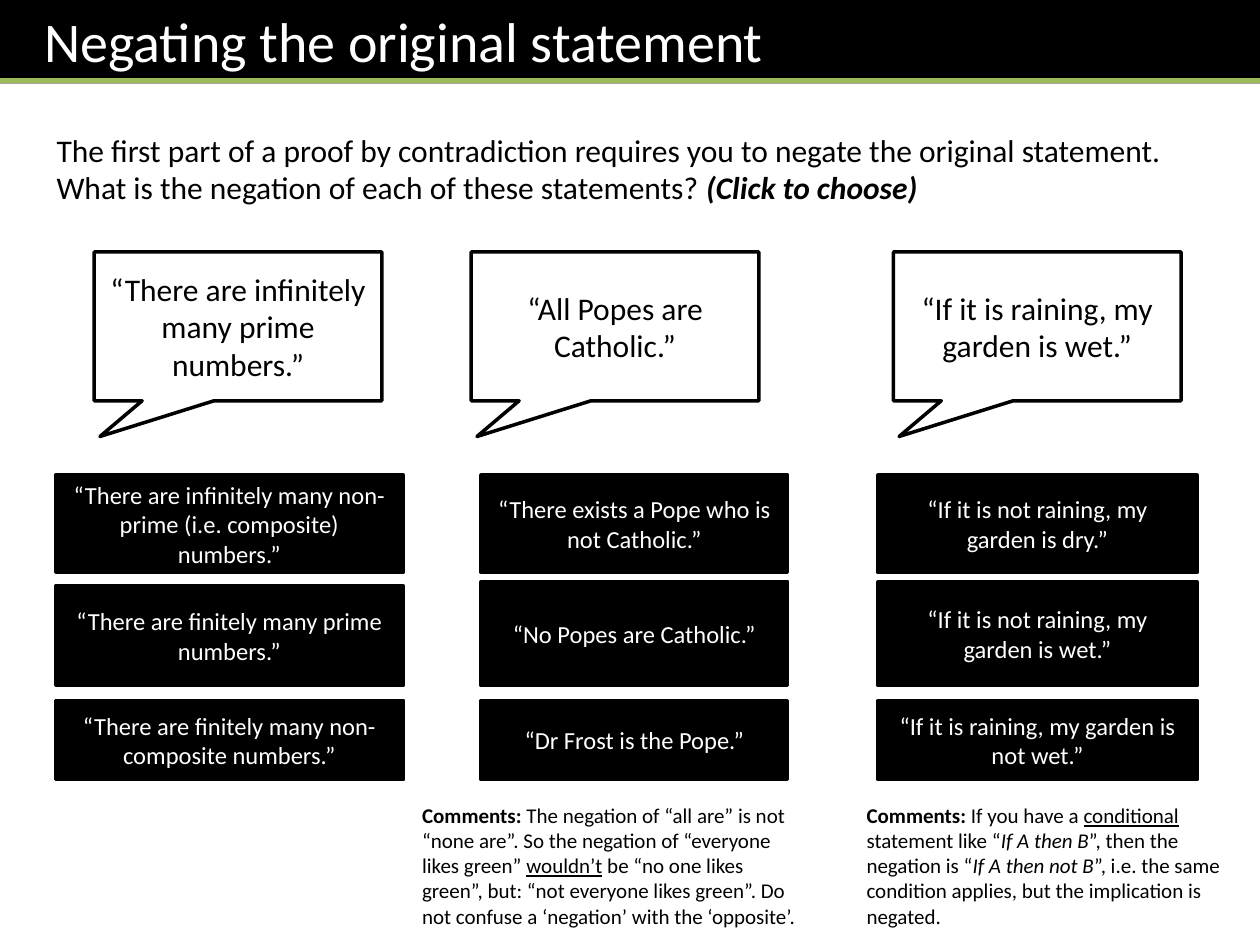
import pptx
import pptx.dml.color
import pptx.enum.shapes
import pptx.enum.text
import pptx.util
from lxml import etree

Cm = pptx.util.Cm
Pt = pptx.util.Pt
SHAPES = pptx.enum.shapes.MSO_SHAPE
ANCHOR = pptx.enum.text.MSO_ANCHOR
ALIGN = pptx.enum.text.PP_ALIGN

FONT = "Calibri"
BLACK, WHITE, GREEN = "000000", "FFFFFF", "9BBB59"

TITLE = "Negating the original statement"
INTRO = [
    [("The first part of a proof by contradiction requires you to negate the original statement.", "")],
    [("What is the negation of each of these statements? ", ""), ("(Click to choose)", "bi")],
]
COLUMNS = [
    {
        "statement": "“There are infinitely many prime numbers.”",
        "callout_left": 1.9,
        "left": 1.12,
        "width": 7.01,
        "rows": [(9.58, 11.54), (11.81, 13.82), (14.12, 15.72)],
        "choices": [
            "“There are infinitely many non-prime (i.e. composite) numbers.”",
            "“There are finitely many prime numbers.”",
            "“There are finitely many non-composite numbers.”",
        ],
    },
    {
        "statement": "“All Popes are Catholic.”",
        "callout_left": 9.5,
        "left": 9.7,
        "width": 6.18,
        "rows": [(9.58, 11.54), (11.73, 13.82), (14.12, 15.72)],
        "choices": [
            "“There exists a Pope who is not Catholic.”",
            "“No Popes are Catholic.”",
            "“Dr Frost is the Pope.”",
        ],
    },
    {
        "statement": "“If it is raining, my garden is wet.”",
        "callout_left": 18.01,
        "left": 17.7,
        "width": 6.43,
        "rows": [(9.58, 11.54), (11.73, 13.82), (14.12, 15.72)],
        "choices": [
            "“If it is not raining, my garden is dry.”",
            "“If it is not raining, my garden is wet.”",
            "“If it is raining, my garden is not wet.”",
        ],
    },
]
COMMENTS = [
    (8.26, [
        ("Comments:", "b"),
        (" The negation of “all are” is not “none are”. So the negation of “everyone likes green” ", ""),
        ("wouldn’t", "u"),
        (" be “no one likes green”, but: “not everyone likes green”. "
         "Do not confuse a ‘negation’ with the ‘opposite’.", ""),
    ]),
    (17.22, [
        ("Comments:", "b"),
        (" If you have a ", ""),
        ("conditional", "u"),
        (" statement like “", ""),
        ("If A then B", "i"),
        ("”, then the negation is “", ""),
        ("If A then not B", "i"),
        ("”, i.e. the same condition applies, but the implication is negated.", ""),
    ]),
]


def paint(color_format, color):
    color_format.rgb = pptx.dml.color.RGBColor.from_string(color)


def fill_with(shape, color):
    shape.fill.solid()
    paint(shape.fill.fore_color, color)


def format_paragraph(paragraph, size, color, alignment):
    paragraph.alignment = alignment
    paragraph.font.name = FONT
    paragraph.font.size = Pt(size)
    paint(paragraph.font.color, color)


def add_title(slide):
    title = slide.shapes.title
    title.left, title.top, title.width, title.height = Cm(0), Cm(0), Cm(25.4), Cm(1.68)
    fill_with(title, BLACK)
    frame = title.text_frame
    frame.text = TITLE
    frame.auto_size = pptx.enum.text.MSO_AUTO_SIZE.NONE
    frame.vertical_anchor = ANCHOR.TOP
    frame.margin_left = Cm(0.89)
    format_paragraph(frame.paragraphs[0], 32, WHITE, ALIGN.LEFT)

    rule = slide.shapes.add_connector(
        pptx.enum.shapes.MSO_CONNECTOR.STRAIGHT, Cm(0), Cm(1.63), Cm(25.4), Cm(1.63))
    paint(rule.line.color, GREEN)
    rule.line.width = Pt(3)
    properties = rule.element.spPr
    etree.SubElement(properties, pptx.oxml.ns.qn("a:effectLst"))


def add_text(slide, left, top, width, height, paragraphs, size):
    frame = slide.shapes.add_textbox(Cm(left), Cm(top), Cm(width), Cm(height)).text_frame
    frame.word_wrap = True
    for index, runs in enumerate(paragraphs):
        paragraph = frame.add_paragraph() if index else frame.paragraphs[0]
        format_paragraph(paragraph, size, BLACK, ALIGN.LEFT)
        for text, style in runs:
            run = paragraph.add_run()
            run.text = text
            if "b" in style:
                run.font.bold = True
            if "i" in style:
                run.font.italic = True
            if "u" in style:
                run.font.underline = True


def add_box(slide, kind, left, top, width, height, text, size, fill, color):
    shape = slide.shapes.add_shape(kind, Cm(left), Cm(top), Cm(width), Cm(height))
    shape.shadow.inherit = False
    fill_with(shape, fill)
    paint(shape.line.color, BLACK)
    shape.line.width = Pt(2)
    frame = shape.text_frame
    frame.text = text
    frame.word_wrap = True
    frame.vertical_anchor = ANCHOR.MIDDLE
    format_paragraph(frame.paragraphs[0], size, color, ALIGN.CENTER)
    return shape


def add_column(slide, column):
    callout = add_box(slide, SHAPES.RECTANGULAR_CALLOUT, column["callout_left"], 5.08, 5.8, 3,
                      column["statement"], 18, WHITE, BLACK)
    callout.adjustments[0] = -0.48
    callout.adjustments[1] = 0.74
    for (top, bottom), choice in zip(column["rows"], column["choices"]):
        add_box(slide, SHAPES.RECTANGLE, column["left"], top, column["width"], bottom - top,
                choice, 14, BLACK, WHITE)


def main():
    presentation = pptx.Presentation()
    presentation.slide_width, presentation.slide_height = Cm(25.4), Cm(19.05)
    slide = presentation.slides.add_slide(presentation.slide_layouts.get_by_name("Title Only"))
    add_title(slide)
    add_text(slide, 0.89, 2.51, 23.4, 2.57, INTRO, 18)
    for column in COLUMNS:
        add_column(slide, column)
    for left, runs in COMMENTS:
        add_text(slide, left, 16.05, 8.18, 2.82, [runs], 12)
    presentation.save("out.pptx")


if __name__ == "__main__":
    main()
